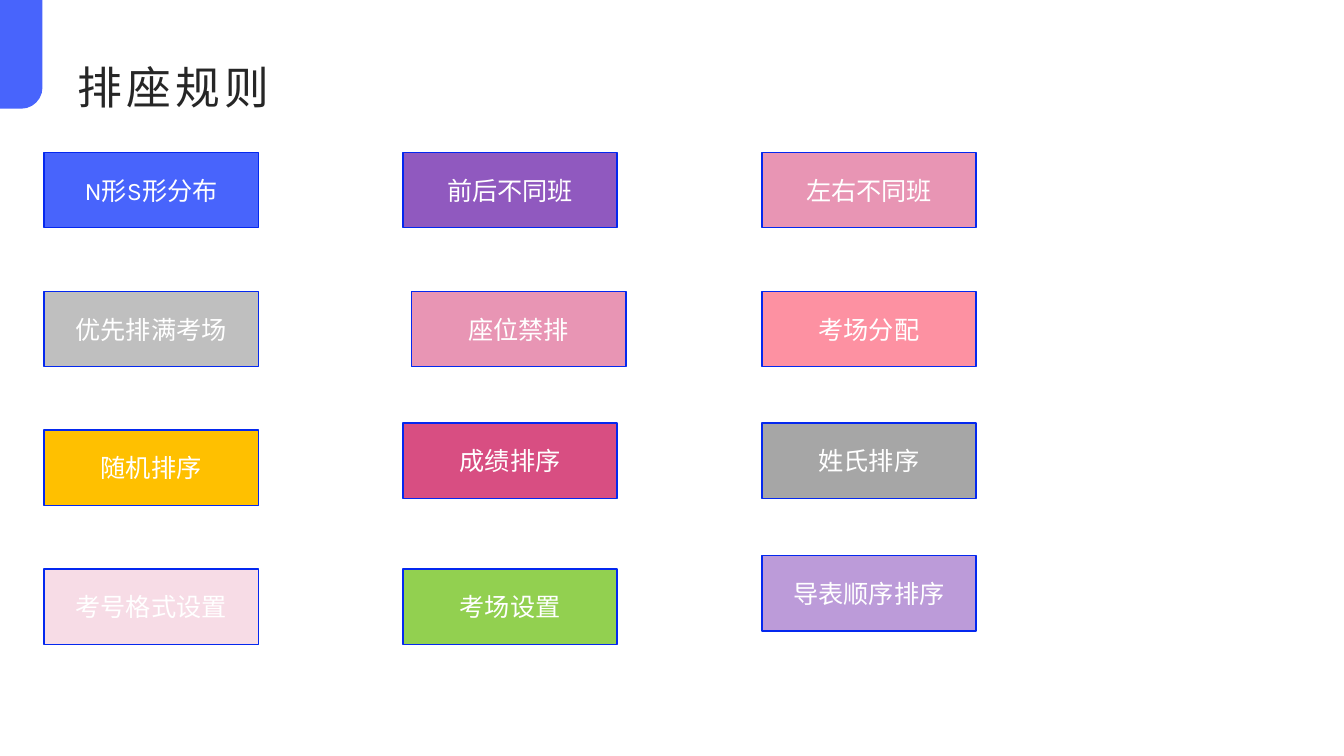
from pptx import Presentation
from pptx.dml.color import RGBColor
from pptx.enum.shapes import MSO_SHAPE
from pptx.enum.text import MSO_ANCHOR, MSO_AUTO_SIZE, PP_ALIGN
from pptx.util import Cm, Pt

COLORS = {
    "blue": "4864FC", "outline": "0428EF", "title": "262626", "white": "FFFFFF",
    "purple": "9059BF", "pink": "E895B4", "silver": "BFBFBF", "coral": "FD91A2",
    "amber": "FFC000", "magenta": "D84E82", "gray": "A6A6A6", "blush": "F7DCE6",
    "green": "92D050", "lilac": "BC9BD9",
}

RULE_ROWS = [
    [("N形S形分布", "blue", 0, 0), ("前后不同班", "purple", 0, 0), ("左右不同班", "pink", 0, 0)],
    [("优先排满考场", "silver", 0, 0), ("座位禁排", "pink", 0.22, 0), ("考场分配", "coral", 0, 0)],
    [("随机排序", "amber", 0, 0), ("成绩排序", "magenta", 0, -0.18), ("姓氏排序", "gray", 0, -0.18)],
    [("考号格式设置", "blush", 0, 0), ("考场设置", "green", 0, 0), ("导表顺序排序", "lilac", 0, -0.34)],
]


def color(name):
    """Return the named palette colour."""
    return RGBColor.from_string(COLORS[name])


def add_text(paragraph, text, font_name, size, color_name):
    """Append a formatted run to the paragraph and return it."""
    run = paragraph.add_run()
    run.text = text
    run.font.name = font_name
    run.font.size = Pt(size)
    run.font.color.rgb = color(color_name)
    return run


def add_corner_tab(slide, left, top, width, height):
    """Draw the tab with its rounded lower right corner in the given box."""
    shift = (height - width) / 2
    tab = slide.shapes.add_shape(
        MSO_SHAPE.ROUND_1_RECTANGLE,
        Cm(left - shift), Cm(top + shift), Cm(height), Cm(width))
    tab.rotation = 90
    tab.adjustments[0] = 0.5
    tab.shadow.inherit = False
    tab.fill.solid()
    tab.fill.fore_color.rgb = color("blue")
    tab.line.fill.background()


def format_title(slide, text, left, top, width, height):
    """Place and fill the title placeholder."""
    title = slide.shapes.title
    title.left, title.top = Cm(left), Cm(top)
    title.width, title.height = Cm(width), Cm(height)
    frame = title.text_frame
    frame.auto_size = MSO_AUTO_SIZE.NONE
    frame.vertical_anchor = MSO_ANCHOR.BOTTOM
    paragraph = frame.paragraphs[0]
    paragraph.alignment = PP_ALIGN.LEFT
    run = add_text(paragraph, text, "Roboto", 32, "title")
    run.font._element.set("spc", "300")


def add_rule_box(slide, text, fill_name, left, top, width, height):
    """Draw one labelled rule rectangle."""
    box = slide.shapes.add_shape(
        MSO_SHAPE.RECTANGLE, Cm(left), Cm(top), Cm(width), Cm(height))
    box.shadow.inherit = False
    box.fill.solid()
    box.fill.fore_color.rgb = color(fill_name)
    box.line.color.rgb = color("outline")
    box.line.width = Pt(1)
    frame = box.text_frame
    frame.word_wrap = True
    frame.vertical_anchor = MSO_ANCHOR.MIDDLE
    paragraph = frame.paragraphs[0]
    paragraph.alignment = PP_ALIGN.CENTER
    add_text(paragraph, text, "Karla", 18, "white")


def add_rule_grid(slide, left, top, width, height):
    """Spread the rule boxes over the given area with their small offsets."""
    box_width, box_height = 5.4, 1.9
    column_step = (width - box_width) / (len(RULE_ROWS[0]) - 1)
    row_step = (height - box_height) / (len(RULE_ROWS) - 1)
    for row, rules in enumerate(RULE_ROWS):
        for column, (text, fill_name, shift_x, shift_y) in enumerate(rules):
            add_rule_box(
                slide, text, fill_name,
                left + column * column_step + shift_x,
                top + row * row_step + shift_y,
                box_width, box_height)


def main():
    """Build and save the seating rules slide."""
    presentation = Presentation()
    presentation.slide_width, presentation.slide_height = Cm(33.87), Cm(19.05)
    slide = presentation.slides.add_slide(presentation.slide_layouts[5])
    add_corner_tab(slide, 0, 0, 1.07, 2.74)
    format_title(slide, "排座规则", 1.7, 1.1, 30.48, 1.88)
    add_rule_grid(slide, 1.11, 3.84, 23.49, 12.4)
    presentation.save("out.pptx")


if __name__ == "__main__":
    main()
